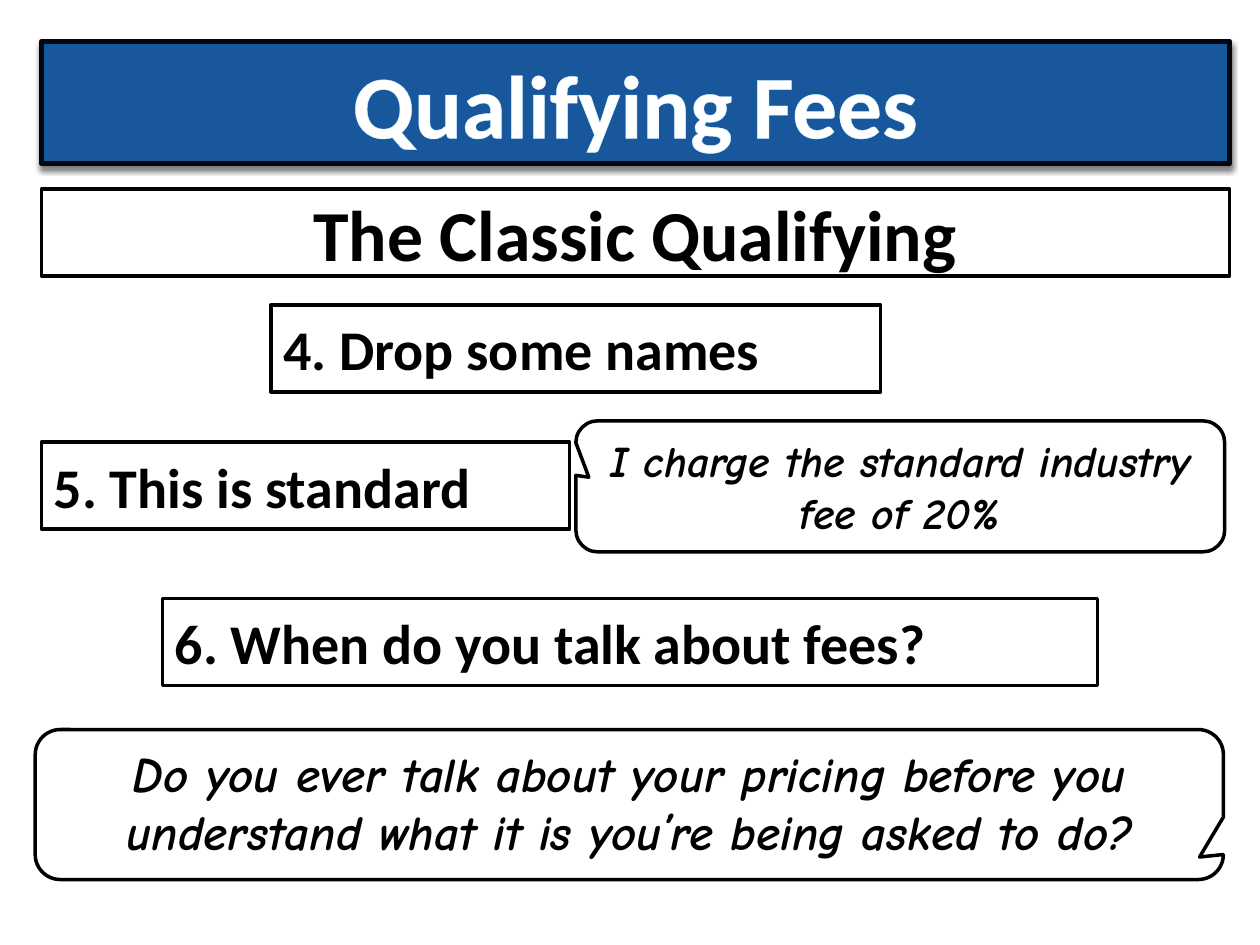
from lxml import etree
from pptx import Presentation
from pptx.dml.color import RGBColor
from pptx.enum.shapes import MSO_SHAPE
from pptx.enum.text import MSO_ANCHOR, PP_ALIGN
from pptx.oxml.ns import qn
from pptx.util import Inches, Pt

RECT = MSO_SHAPE.RECTANGLE
CALLOUT = MSO_SHAPE.ROUNDED_RECTANGULAR_CALLOUT
TOP, MIDDLE = MSO_ANCHOR.TOP, MSO_ANCHOR.MIDDLE
LEFT, CENTER = PP_ALIGN.LEFT, PP_ALIGN.CENTER

COLORS = {"blue": "18579B", "navy": "02080F", "ice": "CCF2FD",
          "white": "FFFFFF", "black": "000000"}
HEADING, SPEECH = "Calibri", "Comic Neue"

# Grid of 100 columns by 75 rows on a 10 x 7.5 inch slide
COLS, ROWS = 100, 75
MARGIN, FULL, BOX_H = 3.3, 94.3, 6.9


def rgb(name):
    return RGBColor.from_string(COLORS[name])


def add_color(parent, name, alpha=None):
    clr = etree.SubElement(parent, qn("a:srgbClr"), val=COLORS[name])
    if alpha is not None:
        etree.SubElement(clr, qn("a:alpha"), val=str(alpha * 1000))


def write(sp, text, font=HEADING, size=32, color="black", italic=False,
          align=LEFT, anchor=MIDDLE):
    tf = sp.text_frame
    tf.word_wrap = True
    tf.vertical_anchor = anchor
    p = tf.paragraphs[0]
    p.alignment = align
    r = p.add_run()
    r.text = text
    r.font.name, r.font.size = font, Pt(size)
    r.font.bold, r.font.italic = True, italic
    r.font.color.rgb = rgb(color)
    return r


class Deck:
    def __init__(self):
        self.prs = Presentation()
        self.prs.slide_width, self.prs.slide_height = Inches(10), Inches(7.5)
        self.s = self.prs.slides.add_slide(self.prs.slide_layouts[6])

    def shape(self, kind, x, y, w, h, fill="white", line="black", weight=2):
        dx, dy = self.prs.slide_width / COLS, self.prs.slide_height / ROWS
        sp = self.s.shapes.add_shape(kind, round(x * dx), round(y * dy),
                                     round(w * dx), round(h * dy))
        sp.shadow.inherit = False
        sp.fill.solid()
        sp.fill.fore_color.rgb = rgb(fill)
        sp.line.color.rgb = rgb(line)
        sp.line.width = Pt(weight)
        return sp

    def banner(self, text, y, h):
        sp = self.shape(RECT, MARGIN, y, FULL, h, "blue", "navy", 3)
        # Soft shadow below the banner
        effects = sp._element.spPr.find(qn("a:effectLst"))
        shadow = etree.SubElement(effects, qn("a:outerShdw"), blurRad=str(Pt(3)),
                                  dist=str(Pt(2)), dir=str(90 * 60000),
                                  rotWithShape="0")
        add_color(shadow, "black", 50)
        # Thin outline around the letters
        r = write(sp, text, size=51, color="white", align=CENTER)
        ln = etree.Element(qn("a:ln"), w=str(Pt(1)))
        add_color(etree.SubElement(ln, qn("a:solidFill")), "ice")
        r.font._element.insert(0, ln)

    def box(self, text, x, y, w, **style):
        write(self.shape(RECT, x, y, w, BOX_H), text, **style)

    def callout(self, text, x, y, w, h, tail, size):
        sp = self.shape(CALLOUT, x, y, w, h)
        for i, value in enumerate((*tail, 0.167)):
            sp.adjustments[i] = value
        write(sp, text, font=SPEECH, size=size, italic=True,
              align=CENTER, anchor=TOP)


def main():
    deck = Deck()

    # Headings
    deck.banner("Qualifying Fees", 3.3, 9.7)
    deck.box("The Classic Qualifying", MARGIN, 15, FULL, size=41, align=CENTER)

    # Steps and what to say
    deck.box("4. Drop some names", 21.5, 24.2, 48.4)
    deck.callout("I charge the standard industry fee of 20%",
                 45.7, 33.4, 51.5, 10.4, (-0.48, -0.07), 25)
    deck.box("5. This is standard", MARGIN, 35.1, 41.9)
    deck.box("6. When do you talk about fees?", 12.9, 47.5, 74.2)
    deck.callout("Do you ever talk about your pricing before you understand "
                 "what it is you’re being asked to do?",
                 2.8, 57.9, FULL, 11.9, (0.48, 0.35), 28)

    deck.prs.save("out.pptx")


if __name__ == "__main__":
    main()
